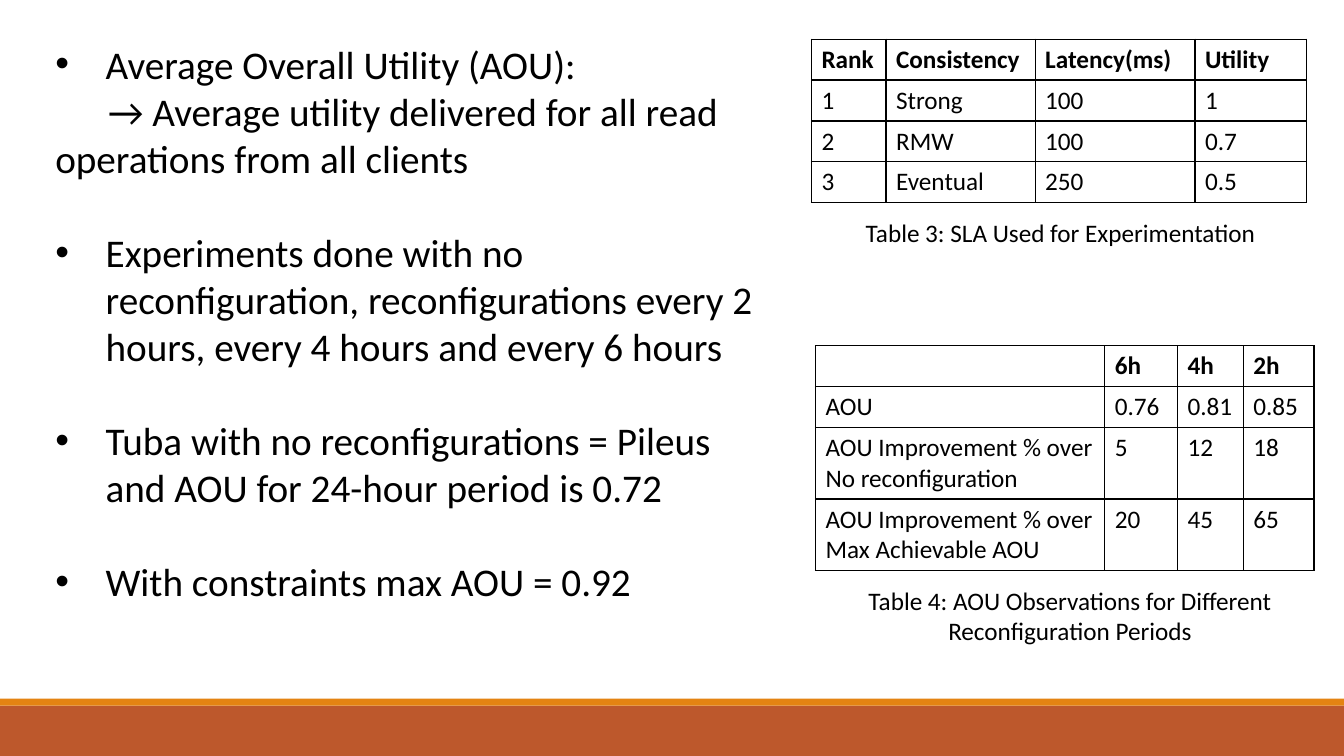
from dataclasses import dataclass, field
from typing import Any

from lxml import etree
from pptx import Presentation
from pptx import util as u
from pptx.dml import color
from pptx.enum import shapes, text
from pptx.oxml import ns


@dataclass(frozen=True)
class Theme:
    font: str = "Calibri"
    ink: str = "000000"
    bar: str = "BD582C"
    stripe: str = "E48312"
    body: float = 28
    small: float = 18
    line: float = 33.6
    border: float = 1


@dataclass(frozen=True)
class Box:
    left: float
    top: float
    width: float
    height: float

    def lengths(self) -> list[u.Length]:
        return [u.Pt(v) for v in (self.left, self.top, self.width, self.height)]


@dataclass(frozen=True)
class Bar:
    box: Box
    fill: str


@dataclass(frozen=True)
class Para:
    text: str
    bullet: bool = False
    indent: float = 0
    fmt: dict[str, Any] = field(default_factory=dict)


@dataclass(frozen=True)
class TextBlock:
    box: Box
    size: float
    paras: list[Para]


@dataclass(frozen=True)
class Grid:
    left: float
    top: float
    cols: list[float]
    rows: list[float]
    values: list[list[str]]


THEME = Theme()
LINE = u.Pt(THEME.line)
FIRST = {"line_spacing": LINE}
NEXT = {"line_spacing": LINE, "space_before": LINE}
CENTER = {"alignment": text.PP_ALIGN.CENTER}

BARS = [
    Bar(Box(0, 504, 960, 36), THEME.bar),
    Bar(Box(0, 499, 960, 5), THEME.stripe),
]

BLOCKS = [
    TextBlock(Box(32.4, 25, 525, 415), THEME.body, [
        Para("Average Overall Utility (AOU):", True, fmt=FIRST),
        Para("→ Average utility delivered for all read operations from all clients",
             indent=37.7, fmt=FIRST),
        Para("Experiments done with no reconfiguration, reconfigurations every 2 hours, "
             "every 4 hours and every 6 hours", True, fmt=NEXT),
        Para("Tuba with no reconfigurations = Pileus and AOU for 24-hour period is 0.72",
             True, fmt=NEXT),
        Para("With constraints max AOU = 0.92", True, fmt=NEXT),
    ]),
    TextBlock(Box(611.3, 152, 297.4, 29), THEME.small,
              [Para("Table 3: SLA Used for Experimentation")]),
    TextBlock(Box(579.6, 414.3, 369.4, 72.7), THEME.small,
              [Para("Table 4: AOU Observations for Different Reconfiguration Periods",
                    fmt=CENTER)]),
]

GRIDS = [
    Grid(579.6, 28, [53.3, 106.5, 114.2, 79.7], [29.2] * 4, [
        ["Rank", "Consistency", "Latency(ms)", "Utility"],
        ["1", "Strong", "100", "1"],
        ["2", "RMW", "100", "0.7"],
        ["3", "Eventual", "250", "0.5"],
    ]),
    Grid(582.5, 247, [206.6, 52, 47, 50.5], [29.2, 29.2, 51, 51], [
        ["", "6h", "4h", "2h"],
        ["AOU", "0.76", "0.81", "0.85"],
        ["AOU Improvement % over No reconfiguration", "5", "12", "18"],
        ["AOU Improvement % over Max Achievable AOU", "20", "45", "65"],
    ]),
]


def apply(obj: Any, fmt: dict[str, Any]) -> None:
    for name, value in fmt.items():
        setattr(obj, name, value)


def style_font(font: Any, size: float, bold: bool = False) -> None:
    apply(font, {"name": THEME.font, "size": u.Pt(size), "bold": bold})
    font.color.rgb = color.RGBColor.from_string(THEME.ink)


def draw_bar(s: Any, bar: Bar) -> None:
    sp = s.shapes.add_shape(shapes.MSO_SHAPE.RECTANGLE, *bar.box.lengths())
    sp.shadow.inherit = False
    sp.fill.solid()
    sp.fill.fore_color.rgb = color.RGBColor.from_string(bar.fill)
    sp.line.fill.background()


def draw_text(s: Any, block: TextBlock) -> None:
    tf = s.shapes.add_textbox(*block.box.lengths()).text_frame
    tf.word_wrap = True
    for i, para in enumerate(block.paras):
        p = tf.add_paragraph() if i else tf.paragraphs[0]
        apply(p, para.fmt)
        pr = p._p.get_or_add_pPr()
        if para.bullet:
            pr.set("marL", str(u.Pt(36)))
            pr.set("indent", str(u.Pt(-36)))
            etree.SubElement(pr, ns.qn("a:buFont"), typeface="Arial")
            etree.SubElement(pr, ns.qn("a:buChar"), char="•")
        elif para.indent:
            pr.set("indent", str(u.Pt(para.indent)))
        r = p.add_run()
        r.text = para.text
        style_font(r.font, block.size)


def add_borders(cell: Any) -> None:
    pr = cell._tc.get_or_add_tcPr()
    for i, side in enumerate("LRTB"):
        ln = etree.Element(ns.qn(f"a:ln{side}"), w=str(u.Pt(THEME.border)))
        fill = etree.SubElement(ln, ns.qn("a:solidFill"))
        etree.SubElement(fill, ns.qn("a:srgbClr"), val=THEME.ink)
        pr.insert(i, ln)


def draw_grid(s: Any, grid: Grid) -> None:
    box = Box(grid.left, grid.top, sum(grid.cols), sum(grid.rows))
    tbl = s.shapes.add_table(len(grid.rows), len(grid.cols), *box.lengths()).table
    apply(tbl, {"first_row": False, "horz_banding": False})
    for col, width in zip(tbl.columns, grid.cols):
        col.width = u.Pt(width)
    for i, (row, height, values) in enumerate(zip(tbl.rows, grid.rows, grid.values)):
        row.height = u.Pt(height)
        for cell, value in zip(row.cells, values):
            cell.fill.background()
            add_borders(cell)
            p = cell.text_frame.paragraphs[0]
            if value:
                r = p.add_run()
                r.text = value
                style_font(r.font, THEME.small, bold=i == 0)


def main() -> None:
    prs = Presentation()
    apply(prs, {"slide_width": u.Pt(960), "slide_height": u.Pt(540)})
    s = prs.slides.add_slide(prs.slide_layouts[6])
    for bar in BARS:
        draw_bar(s, bar)
    for block in BLOCKS:
        draw_text(s, block)
    for grid in GRIDS:
        draw_grid(s, grid)
    prs.save("out.pptx")


if __name__ == "__main__":
    main()
